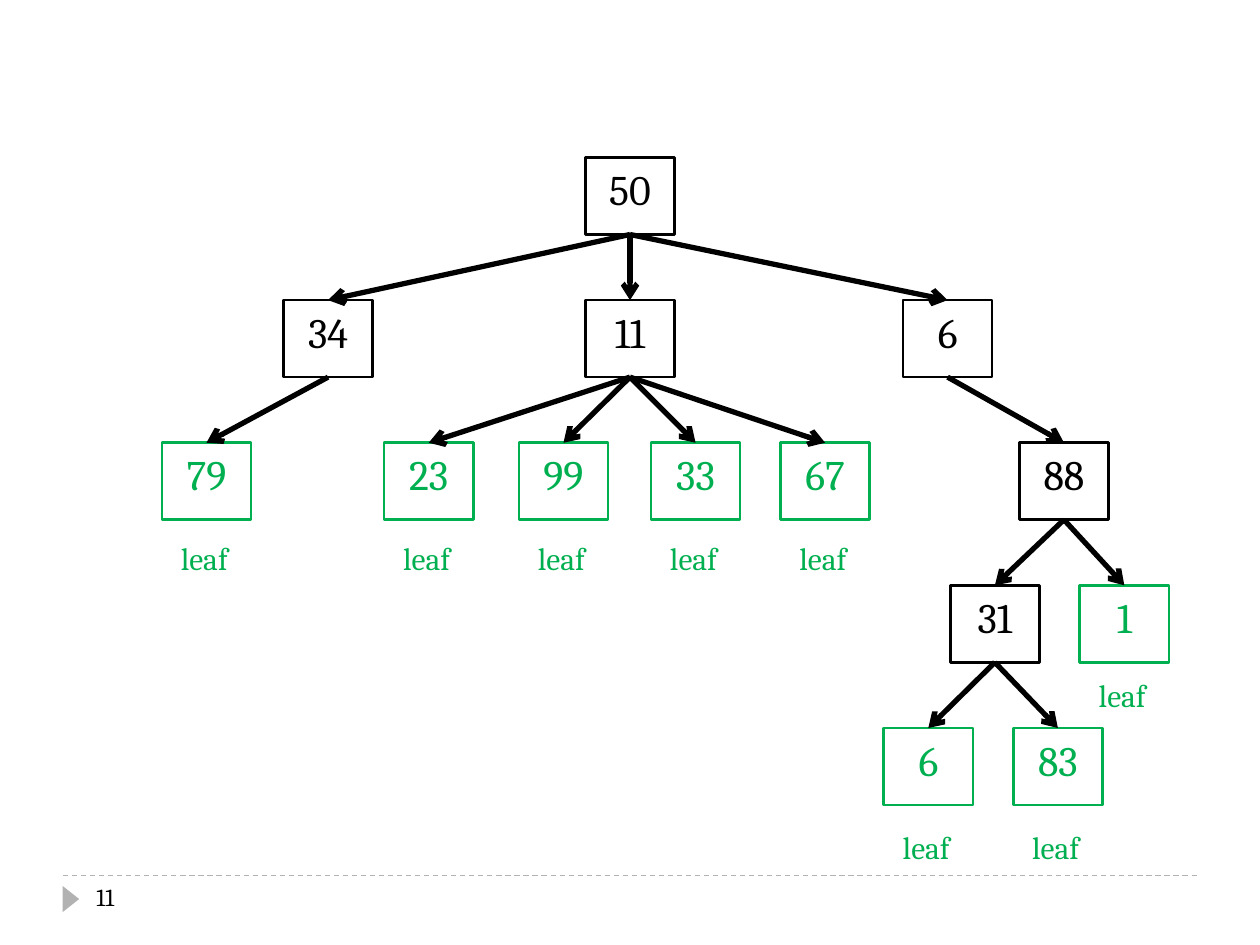
from lxml import etree
from pptx import Presentation
from pptx.dml.color import RGBColor
from pptx.enum.dml import MSO_LINE
from pptx.enum.shapes import MSO_CONNECTOR, MSO_SHAPE
from pptx.enum.text import MSO_ANCHOR, MSO_AUTO_SIZE, PP_ALIGN
from pptx.oxml.ns import qn
from pptx.util import Pt

STRAIGHT = MSO_CONNECTOR.STRAIGHT
RECTANGLE, TRIANGLE = MSO_SHAPE.RECTANGLE, MSO_SHAPE.ISOSCELES_TRIANGLE
DASH = MSO_LINE.DASH
TOP = MSO_ANCHOR.TOP
FIT_SHAPE = MSO_AUTO_SIZE.SHAPE_TO_FIT_TEXT
LEFT, CENTER = PP_ALIGN.LEFT, PP_ALIGN.CENTER
BLACK = RGBColor(0, 0, 0)
GREEN = RGBColor(0, 0xB0, 0x50)
GRAY = RGBColor(0xB2, 0xB2, 0xB2)

# value, centre x, children
TREE = ("50", 360, [
    ("34", 187.5, [("79", 118, [])]),
    ("11", 360, [
        ("23", 245, []),
        ("99", 322, []),
        ("33", 397.5, []),
        ("67", 471.5, []),
    ]),
    ("6", 541.5, [
        ("88", 608, [
            ("31", 568.5, [("6", 530.5, []), ("83", 604.5, [])]),
            ("1", 642.5, []),
        ]),
    ]),
])
LEAF_LABEL = "leaf"
LABEL_TOPS = {2: 304.5, 3: 383, 4: 469.5}
PAGE_NUMBER = "11"

ROOT_TOP, LEVEL_STEP = 90, 81.5
NODE_WIDTH, NODE_HEIGHT = 51, 44
LABEL_WIDTH, LABEL_HEIGHT = 42.5, 29
BOTTOM_SITE, TOP_SITE = 2, 0


def write(shape, text, size, color, align):
    frame = shape.text_frame
    frame.vertical_anchor = TOP
    paragraph = frame.paragraphs[0]
    paragraph.alignment = align
    run = paragraph.add_run()
    run.text = text
    for key, value in {"name": "Cambria", "size": Pt(size)}.items():
        setattr(run.font, key, value)
    run.font.color.rgb = color
    return frame


def add_line(slide, ends, color, width):
    line = slide.shapes.add_connector(STRAIGHT, *map(Pt, ends))
    line.line.color.rgb = color
    line.line.width = Pt(width)
    etree.SubElement(line._element.spPr, qn("a:effectLst"))
    return line


def add_text(slide, bounds, text, size, color, align):
    box = slide.shapes.add_textbox(*map(Pt, bounds))
    return write(box, text, size, color, align)


def add_edge(slide, parent, child):
    edge = add_line(slide, (0, 0, 0, 0), BLACK, 3)
    edge.begin_connect(parent, BOTTOM_SITE)
    edge.end_connect(child, TOP_SITE)
    etree.SubElement(edge.line._get_or_add_ln(), qn("a:tailEnd"), type="arrow")


def add_node(slide, node, level=0):
    value, center, children = node
    color = BLACK if children else GREEN
    bounds = (center - NODE_WIDTH / 2, ROOT_TOP + level * LEVEL_STEP,
              NODE_WIDTH, NODE_HEIGHT)
    box = slide.shapes.add_shape(RECTANGLE, *map(Pt, bounds))
    box.shadow.inherit = False
    box.fill.background()
    box.line.color.rgb = color
    box.line.width = Pt(1.5)
    write(box, value, 24, color, CENTER)
    for child in children:
        add_edge(slide, box, add_node(slide, child, level + 1))
    if not children:
        label_bounds = (center - LABEL_WIDTH / 2 - 0.5, LABEL_TOPS[level],
                        LABEL_WIDTH, LABEL_HEIGHT)
        label = add_text(slide, label_bounds, LEAF_LABEL, 18, GREEN, LEFT)
        label.word_wrap = False
        label.auto_size = FIT_SHAPE
    return box


def add_footer(slide):
    rule = add_line(slide, (36, 500.5, 684, 500.5), GRAY, 0.75)
    rule.line.dash_style = DASH
    marker = slide.shapes.add_shape(TRIANGLE, *map(Pt, (33, 509, 15, 9.5)))
    marker.rotation = 90
    marker.shadow.inherit = False
    marker.fill.solid()
    marker.fill.fore_color.rgb = GRAY
    marker.line.fill.background()
    number = add_text(slide, (48, 500.5, 156, 29), PAGE_NUMBER, 14, BLACK, LEFT)
    number.word_wrap = True


def main():
    deck = Presentation()
    deck.slide_width, deck.slide_height = Pt(720), Pt(540)
    slide = deck.slides.add_slide(deck.slide_layouts[6])
    add_footer(slide)
    add_node(slide, TREE)
    deck.save("out.pptx")


if __name__ == "__main__":
    main()
